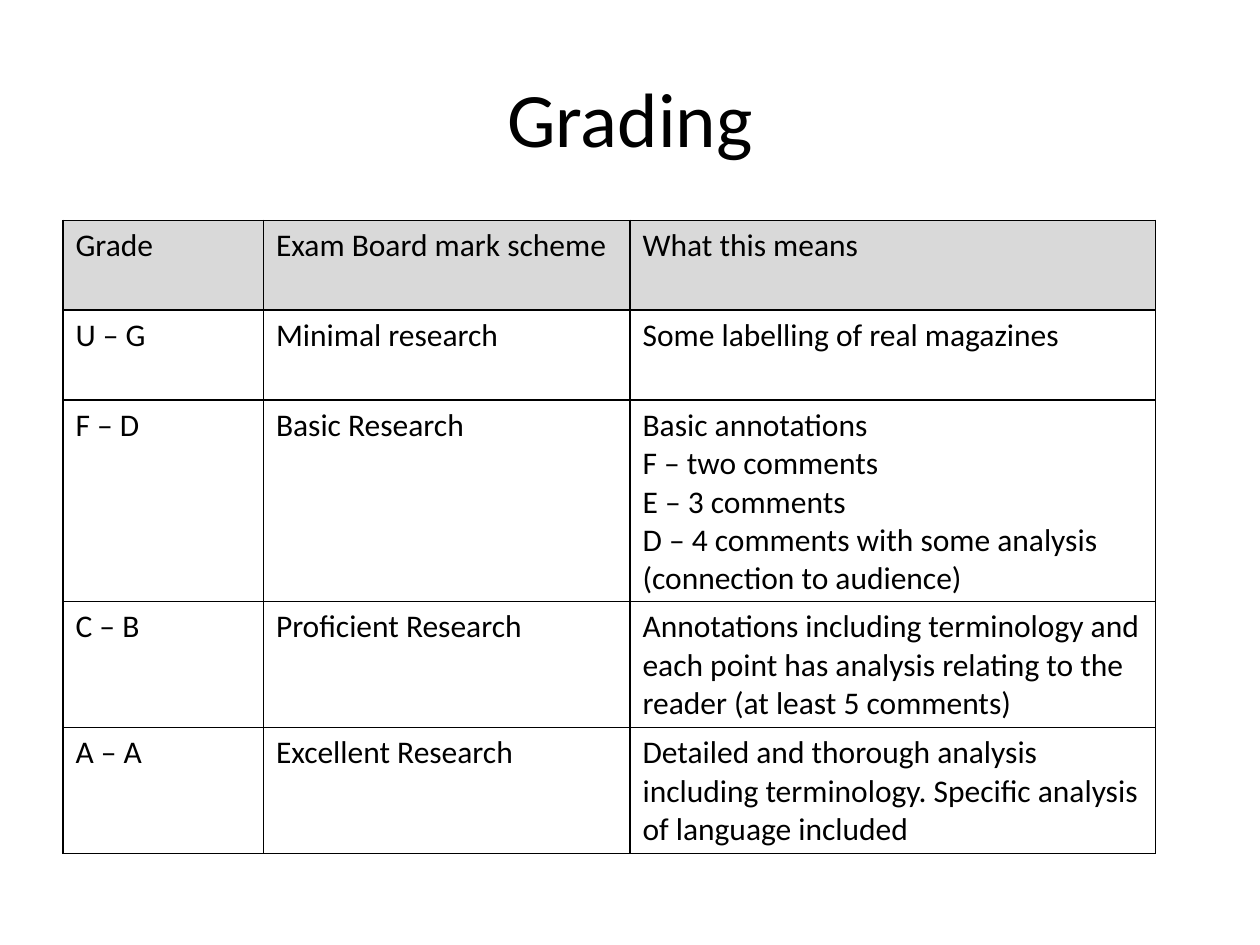
from dataclasses import dataclass

from lxml import etree
from pptx import Presentation
from pptx import util as u
from pptx.dml.color import RGBColor
from pptx.enum import text
from pptx.oxml import ns


@dataclass(frozen=True)
class Theme:
    font: str = "Calibri"
    ink: str = "000000"
    header_fill: str = "D9D9D9"
    title_size: int = 44
    body_size: int = 18
    border_width: int = 1


@dataclass(frozen=True)
class Band:
    grades: str
    scheme: str
    meaning: tuple[str, ...]


THEME = Theme()
MARGIN = u.Cm(1.27)
COLUMN_WIDTHS = [u.Cm(4.04), u.Cm(7.39), u.Cm(10.59)]
MIN_ROW_HEIGHT = u.Cm(1.81)
TABLE_HEIGHT = u.Cm(12.78)

BANDS = [
    Band("Grade", "Exam Board mark scheme", ("What this means",)),
    Band("U – G", "Minimal research", ("Some labelling of real magazines",)),
    Band("F – D", "Basic Research", (
        "Basic annotations",
        "F – two comments",
        "E – 3 comments",
        "D – 4 comments with some analysis (connection to audience)",
    )),
    Band("C – B", "Proficient Research", (
        "Annotations including terminology and each point has analysis "
        "relating to the reader (at least 5 comments)",
    )),
    Band("A – A", "Excellent Research", (
        "Detailed and thorough analysis including terminology. "
        "Specific analysis of language included",
    )),
]


def write(frame, lines: tuple[str, ...], size: int, align=text.PP_ALIGN.LEFT) -> None:
    """Write one paragraph per line."""
    for index, line in enumerate(lines):
        paragraph = frame.add_paragraph() if index else frame.paragraphs[0]
        paragraph.alignment = align
        run = paragraph.add_run()
        run.text = line
        run.font.name = THEME.font
        run.font.size = u.Pt(size)
        run.font.color.rgb = RGBColor.from_string(THEME.ink)


def add_borders(cell) -> None:
    """Rule all four sides; the lines must precede the fill in tcPr."""
    properties = cell._tc.get_or_add_tcPr()
    for index, side in enumerate(("lnL", "lnR", "lnT", "lnB")):
        line = etree.Element(ns.qn(f"a:{side}"), w=str(u.Pt(THEME.border_width)))
        fill = etree.SubElement(line, ns.qn("a:solidFill"))
        etree.SubElement(fill, ns.qn("a:srgbClr"), val=THEME.ink)
        properties.insert(index, line)


def add_title(slide, title: str) -> None:
    box = slide.shapes.add_textbox(MARGIN, u.Cm(0.76), u.Cm(22.86), u.Cm(3.18))
    frame = box.text_frame
    frame.word_wrap = True
    frame.vertical_anchor = text.MSO_ANCHOR.MIDDLE
    write(frame, (title,), THEME.title_size, text.PP_ALIGN.CENTER)


def add_grade_table(slide, bands: list[Band]) -> None:
    holder = slide.shapes.add_table(
        len(bands), len(COLUMN_WIDTHS), MARGIN, u.Cm(4.44),
        sum(COLUMN_WIDTHS), TABLE_HEIGHT)
    table = holder.table
    table.first_row = table.horz_banding = False
    for column, width in zip(table.columns, COLUMN_WIDTHS):
        column.width = width

    # Rows share a minimum height and grow with their text
    for index, (row, band) in enumerate(zip(table.rows, bands)):
        row.height = MIN_ROW_HEIGHT
        contents = ((band.grades,), (band.scheme,), band.meaning)
        for cell, lines in zip(row.cells, contents):
            write(cell.text_frame, lines, THEME.body_size)
            if index == 0:
                cell.fill.solid()
                cell.fill.fore_color.rgb = RGBColor.from_string(THEME.header_fill)
            else:
                cell.fill.background()
            add_borders(cell)
    holder.height = TABLE_HEIGHT


def main() -> None:
    deck = Presentation()
    deck.slide_width, deck.slide_height = u.Cm(25.4), u.Cm(19.05)
    slide = deck.slides.add_slide(deck.slide_layouts[6])

    # Heading
    add_title(slide, "Grading")

    # Grade bands
    add_grade_table(slide, BANDS)

    deck.save("out.pptx")


if __name__ == "__main__":
    main()
